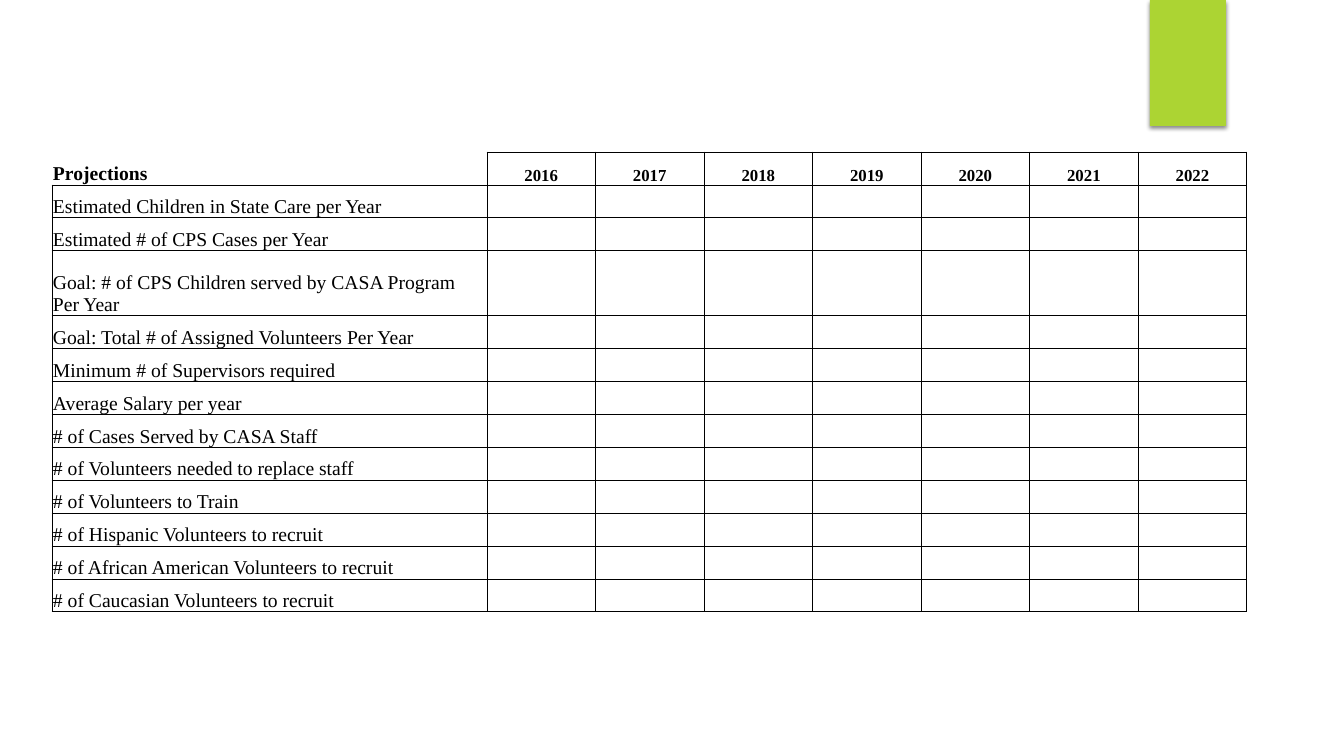
from lxml import etree
from pptx import Presentation, util as u
from pptx.dml.color import RGBColor
from pptx.enum import shapes, text
from pptx.oxml import ns

COLORS = {"accent": "ACD433", "ink": "000000", "paper": "FFFFFF"}
FONT = "Times New Roman"
YEARS = range(2016, 2023)
PROJECTIONS = [
    "Estimated Children in State Care per Year",
    "Estimated # of CPS Cases per Year",
    "Goal: # of CPS Children served by CASA Program Per Year",
    "Goal: Total # of Assigned Volunteers Per Year",
    "Minimum # of Supervisors required",
    "Average Salary per year",
    "# of Cases Served by CASA Staff",
    "# of Volunteers needed to replace staff",
    "# of Volunteers to Train",
    "# of Hispanic Volunteers to recruit",
    "# of African American Volunteers to recruit",
    "# of Caucasian Volunteers to recruit",
]
TALL_ROW = 3


def px(n):
    return u.Emu(round(n * 12192000 / 1344))


def add_xml(parent, tag, **attrs):
    return etree.SubElement(parent, ns.qn(tag), {k: str(v) for k, v in attrs.items()})


class Deck:
    def __init__(self):
        self.prs = Presentation()
        self.prs.slide_width, self.prs.slide_height = px(1344), px(756)
        self.s = self.prs.slides.add_slide(self.prs.slide_layouts[6])

    def color(self, name):
        return RGBColor.from_string(COLORS[name])

    def block(self, x, y, w, h, fill):
        sp = self.s.shapes.add_shape(
            shapes.MSO_SHAPE.RECTANGLE, px(x), px(y), px(w), px(h))
        sp.fill.solid()
        sp.fill.fore_color.rgb = self.color(fill)
        sp.line.fill.background()
        sp.shadow.inherit = False
        effects = sp._element.spPr.find(ns.qn("a:effectLst"))
        shadow = add_xml(effects, "a:outerShdw", blurRad=u.Pt(3), dist=u.Pt(2),
                         dir=5400000, algn="ctr", rotWithShape=0)
        ink = add_xml(shadow, "a:srgbClr", val=COLORS["ink"])
        add_xml(ink, "a:alpha", val=45000)

    def borders(self, cell, sides):
        tcPr = cell._tc.get_or_add_tcPr()
        for side in "LRTB":
            ln = add_xml(tcPr, f"a:ln{side}", w=u.Pt(0.5))
            if side in sides:
                add_xml(add_xml(ln, "a:solidFill"), "a:srgbClr", val=COLORS["ink"])
            else:
                add_xml(ln, "a:noFill")

    def cell(self, cell, label, size, bold, align, sides):
        self.borders(cell, sides)
        cell.fill.solid()
        cell.fill.fore_color.rgb = self.color("paper")
        cell.margin_left = cell.margin_right = cell.margin_top = px(1)
        cell.margin_bottom = 0
        cell.vertical_anchor = text.MSO_ANCHOR.BOTTOM
        cell.text_frame.text = label
        p = cell.text_frame.paragraphs[0]
        p.alignment = align
        for r in p.runs:
            r.font.name, r.font.size, r.font.bold = FONT, u.Pt(size), bold
            r.font.color.rgb = self.color("ink")

    def table(self, x, y, w, h, label_w, tall_h, rows):
        n_rows, n_cols = len(rows), len(rows[0])
        frame = self.s.shapes.add_table(n_rows, n_cols, px(x), px(y), px(w), px(h))
        tbl = frame.table
        tbl.first_row = tbl.horz_banding = False
        for j, col in enumerate(tbl.columns):
            col.width = px((w - label_w) / (n_cols - 1) if j else label_w)
        for i, row in enumerate(tbl.rows):
            row.height = px(tall_h if i == TALL_ROW else (h - tall_h) / (n_rows - 1))
            for j, label in enumerate(rows[i]):
                self.cell(tbl.cell(i, j), label, 12 if j else 14, i == 0,
                          text.PP_ALIGN.CENTER if j else text.PP_ALIGN.LEFT,
                          "LRTB" if i or j else "RB")


def main():
    deck = Deck()
    deck.block(1150, 0, 76, 126, "accent")
    header = ["Projections", *map(str, YEARS)]
    body = [[name] + [""] * len(YEARS) for name in PROJECTIONS]
    deck.table(52, 152, 1195, 460, 435, 65, [header, *body])
    deck.prs.save("out.pptx")


if __name__ == "__main__":
    main()
